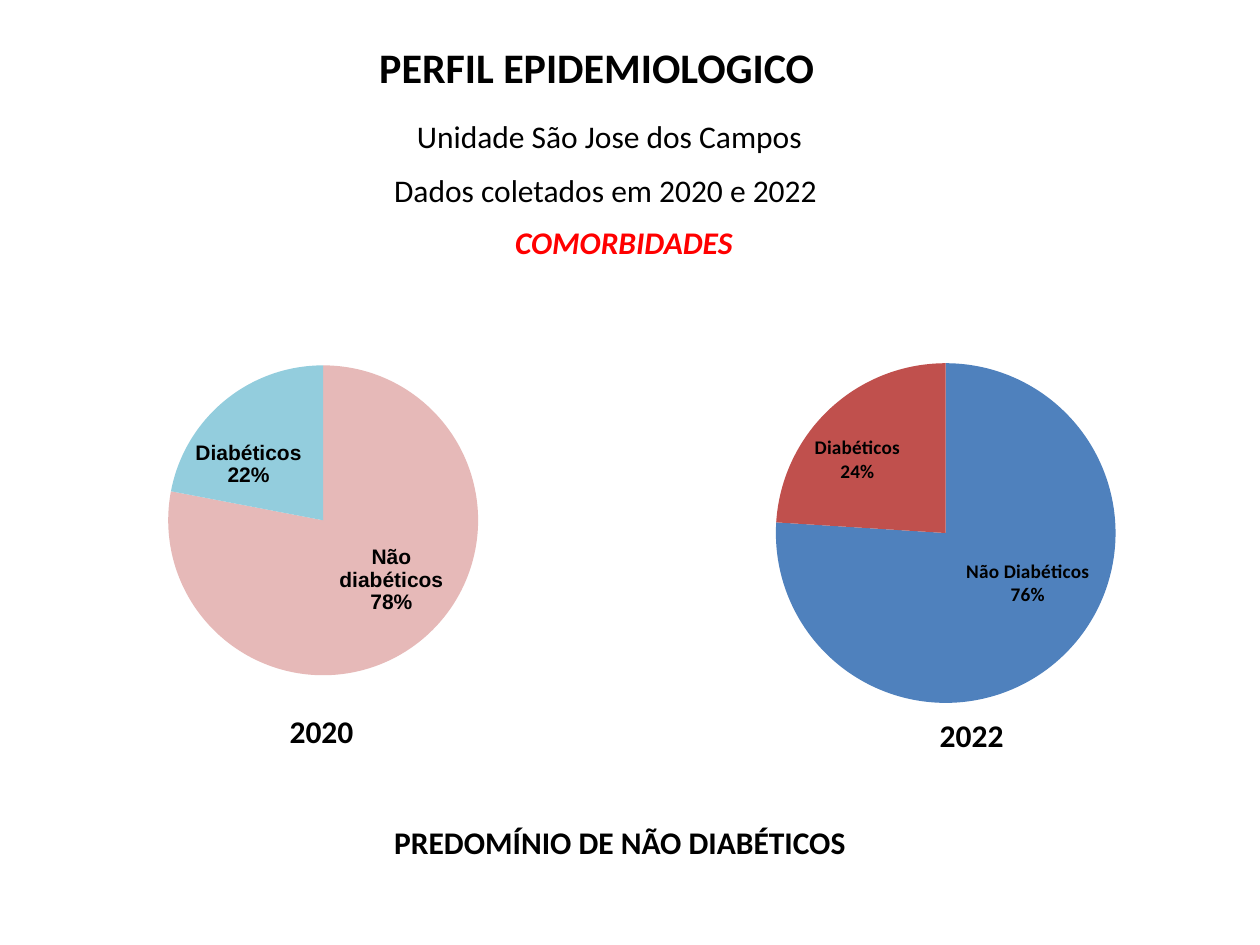
from dataclasses import dataclass

from lxml import etree
from pptx import Presentation
from pptx.chart.data import CategoryChartData
from pptx.dml.color import RGBColor
from pptx.enum.chart import XL_CHART_TYPE, XL_LABEL_POSITION
from pptx.enum.text import MSO_ANCHOR, MSO_AUTO_SIZE, PP_ALIGN
from pptx.oxml import parse_xml
from pptx.oxml.ns import nsdecls, qn
from pptx.util import Inches, Pt

BLACK = RGBColor(0x00, 0x00, 0x00)
RED = RGBColor(0xFF, 0x00, 0x00)
PINK = RGBColor(0xE6, 0xB9, 0xB8)
AQUA = RGBColor(0x93, 0xCD, 0xDD)
BLUE = RGBColor(0x4F, 0x81, 0xBD)
BRICK = RGBColor(0xC0, 0x50, 0x4D)

PIE = XL_CHART_TYPE.PIE
CENTER = XL_LABEL_POSITION.CENTER
LEFT = PP_ALIGN.LEFT
TOP = MSO_ANCHOR.TOP
FIT_SHAPE = MSO_AUTO_SIZE.SHAPE_TO_FIT_TEXT

WIDTH, HEIGHT = Inches(10), Inches(7.5)
TITLE_ONLY = 5


@dataclass(frozen=True)
class Area:
    """A rectangle in percent of the slide's width and height."""
    left: float
    top: float
    width: float
    height: float

    def lengths(self) -> tuple[int, int, int, int]:
        return (int(WIDTH * self.left / 100), int(HEIGHT * self.top / 100),
                int(WIDTH * self.width / 100), int(HEIGHT * self.height / 100))


@dataclass(frozen=True)
class Line:
    text: str
    area: Area
    bold: bool = True
    italic: bool = False
    color: RGBColor = BLACK


@dataclass(frozen=True)
class Slice:
    name: str
    share: int
    color: RGBColor
    label_shift: tuple[float, float]


@dataclass(frozen=True)
class Pie:
    area: Area
    plot: tuple[float, float, float, float]
    slices: tuple[Slice, ...]
    label_font: str
    label_size: int


TITLE_AREA = Area(29.1, 3.73, 36.9, 6.67)
LINES = (
    Line("Unidade São Jose dos Campos", Area(32.1, 11.73, 32.8, 5.33), bold=False),
    Line("Dados coletados em 2020 e 2022", Area(30.3, 17.47, 36, 5.33), bold=False),
    Line("COMORBIDADES", Area(39.9, 22.93, 19.6, 5.33), italic=True, color=RED),
    Line("2020", Area(22, 74.67, 7.1, 5.33)),
    Line("2022", Area(73.6, 75.07, 7.1, 5.33)),
    Line("PREDOMÍNIO DE NÃO DIABÉTICOS", Area(30.3, 86.4, 38.2, 5.33)),
)
PIES = (
    Pie(Area(-0.6, 34.27, 50, 40), (0.09, 0.11, 0.87, 0.82),
        (Slice("Não diabéticos", 78, PINK, (0.03, 0)),
         Slice("Diabéticos", 22, AQUA, (-0.04, 0.01))), "Arial", 12),
    Pie(Area(51.4, 34, 47.8, 40.4), (0.03, 0.11, 0.93, 0.89),
        (Slice("Não Diabéticos", 76, BLUE, (0.04, -0.03)),
         Slice("Diabéticos", 24, BRICK, (-0.05, -0.03))), "Calibri", 11),
)


def format_font(font, *, name: str = "Calibri", size: int = 18, bold: bool = False,
                italic: bool = False, color: RGBColor = BLACK) -> None:
    font.name, font.size = name, Pt(size)
    font.bold, font.italic = bold, italic
    font.color.rgb = color


def write_text(box, text: str, **font_format) -> None:
    frame = box.text_frame
    frame.word_wrap = False
    frame.auto_size = FIT_SHAPE
    frame.vertical_anchor = TOP
    para = frame.paragraphs[0]
    para.alignment = LEFT
    span = para.add_run()
    span.text = text
    format_font(span.font, **font_format)


def chart_layout(**settings):
    """Build a manual chart layout from its settings, in schema order."""
    layout = parse_xml(f"<c:layout {nsdecls('c')}><c:manualLayout/></c:layout>")
    for tag, value in settings.items():
        etree.SubElement(layout[0], qn(f"c:{tag}")).set("val", str(value))
    return layout


def format_label(series, index: int, pie: Pie) -> None:
    """Show category and percentage, shifted from the slice's middle."""
    label = series.points[index].data_label
    format_font(label.font, name=pie.label_font, size=pie.label_size, bold=True)
    label.position = CENTER
    element = series._element.xpath(f"c:dLbls/c:dLbl[c:idx/@val='{index}']")[0]
    for tag, shown in (("showVal", 0), ("showCatName", 1), ("showPercent", 1)):
        element.find(qn(f"c:{tag}")).set("val", str(shown))
    etree.SubElement(element, qn("c:separator")).text = "\n"
    shift_x, shift_y = pie.slices[index].label_shift
    element.find(qn("c:idx")).addnext(chart_layout(x=shift_x, y=shift_y))


def add_pie(slide, pie: Pie) -> None:
    data = CategoryChartData()
    data.categories = [part.name for part in pie.slices]
    data.add_series("Series 1", [part.share for part in pie.slices])
    chart = slide.shapes.add_chart(PIE, *pie.area.lengths(), data).chart
    chart.has_title = chart.has_legend = False
    format_font(chart.font, size=10)
    plot = chart.plots[0]
    plot.vary_by_categories = True
    series = plot.series[0]
    for index, part in enumerate(pie.slices):
        fill = series.points[index].format.fill
        fill.solid()
        fill.fore_color.rgb = part.color
        format_label(series, index, pie)

    plot_area = chart._chartSpace.chart.plotArea
    for old_layout in plot_area.findall(qn("c:layout")):
        plot_area.remove(old_layout)
    left, top, width, height = pie.plot
    plot_area.insert(0, chart_layout(layoutTarget="inner", xMode="edge", yMode="edge",
                                     x=left, y=top, w=width, h=height))


def main() -> None:
    deck = Presentation()
    deck.slide_width, deck.slide_height = WIDTH, HEIGHT
    slide = deck.slides.add_slide(deck.slide_layouts[TITLE_ONLY])

    title = slide.shapes.title
    title.left, title.top, title.width, title.height = TITLE_AREA.lengths()
    write_text(title, "PERFIL EPIDEMIOLOGICO", size=24, bold=True)
    for line in LINES:
        box = slide.shapes.add_textbox(*line.area.lengths())
        write_text(box, line.text, bold=line.bold, italic=line.italic, color=line.color)
    for pie in PIES:
        add_pie(slide, pie)

    deck.save("out.pptx")


if __name__ == "__main__":
    main()
